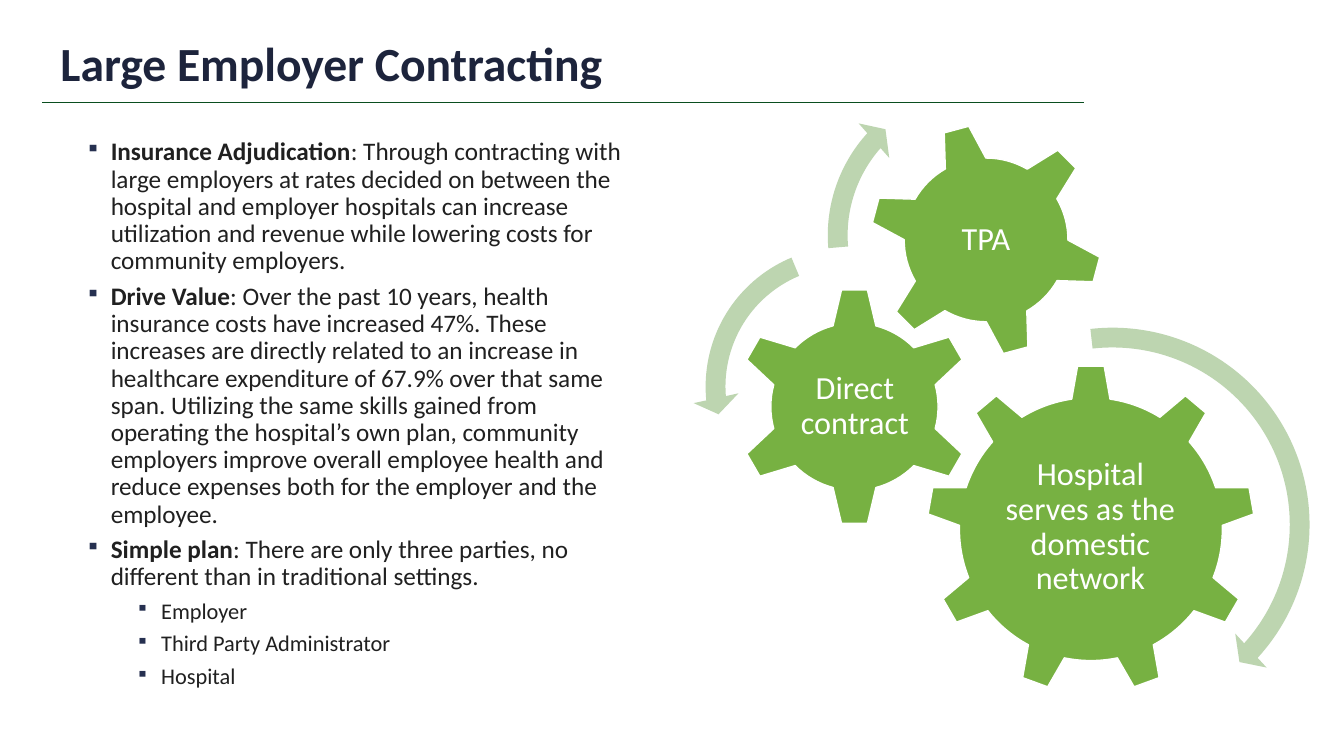
"""Build the Large Employer Contracting slide with its three-gear diagram."""
from dataclasses import dataclass
from typing import NamedTuple

from lxml.etree import SubElement
from pptx import Presentation
from pptx.dml.color import RGBColor
from pptx.enum.shapes import MSO_CONNECTOR, MSO_SHAPE
from pptx.enum.text import MSO_ANCHOR, MSO_AUTO_SIZE, PP_ALIGN
from pptx.oxml.ns import qn
from pptx.util import Emu, Pt

EMU_PER_PX = 9144
TITLE_ONLY = 5


@dataclass(frozen=True)
class Theme:
    font: str = "Calibri"
    title: str = "1D243C"
    rule: str = "0A4E1F"
    body: str = "202020"
    bullet: str = "263050"
    gear: str = "77B142"
    arrow: str = "BDD5B0"
    white: str = "FFFFFF"
    title_size: int = 34
    body_size: int = 18
    sub_size: int = 16
    gear_size: int = 23
    line_spacing: float = 0.9
    space_after: int = 6


class Box(NamedTuple):
    left: int
    top: int
    width: int
    height: int


class Point(NamedTuple):
    lead: str
    rest: str
    level: int = 0


class Gear(NamedTuple):
    preset: MSO_SHAPE
    box: Box
    label: str
    label_box: Box
    rotation: int = 0


class Arrow(NamedTuple):
    preset: MSO_SHAPE
    box: Box
    thickness: float
    head_angle: float
    end_angle: float
    start_angle: float
    head_width: float


THEME = Theme()
TITLE_BOX = Box(50, 30, 1040, 66)
BODY_BOX = Box(75, 133, 562, 542)
POINTS = [
    Point("Insurance Adjudication", ": Through contracting with large employers at rates decided on "
          "between the hospital and employer hospitals can increase utilization and revenue while "
          "lowering costs for community employers."),
    Point("Drive Value", ": Over the past 10 years, health insurance costs have increased 47%. "
          "These increases are directly related to an increase in healthcare expenditure of 67.9% "
          "over that same span. Utilizing the same skills gained from operating the hospital’s own "
          "plan, community employers improve overall employee health and reduce expenses both for "
          "the employer and the employee."),
    Point("Simple plan", ": There are only three parties, no different than in traditional settings."),
    Point("", "Employer", 1),
    Point("", "Third Party Administrator", 1),
    Point("", "Hospital", 1),
]
GEARS = [
    Gear(MSO_SHAPE.GEAR_9, Box(919, 362, 326, 326),
         "Hospital serves as the domestic network", Box(984, 439, 195, 168)),
    Gear(MSO_SHAPE.GEAR_6, Box(729, 285, 237, 237), "Direct contract", Box(789, 345, 118, 117)),
    Gear(MSO_SHAPE.GEAR_6, Box(862, 122, 232, 232), "TPA", Box(913, 173, 130, 130), 345),
]
ARROWS = [
    Arrow(MSO_SHAPE.CIRCULAR_ARROW, Box(895, 312, 417, 417), 4.7, 4.98, 42.32, 263.54, 5.5),
    Arrow(MSO_SHAPE.LEFT_CIRCULAR_ARROW, Box(687, 232, 303, 303), 6.5, 7.17, 174.82, 247.3, 7.5),
    Arrow(MSO_SHAPE.CIRCULAR_ARROW, Box(808, 70, 327, 327), 6, 6.57, 221.9, 175.14, 7),
]


def px(length: int) -> Emu:
    """Turn whole px into EMU."""
    return Emu(length * EMU_PER_PX)


def place(box: Box) -> tuple[Emu, ...]:
    """Turn a box into left, top, width and height in EMU."""
    return tuple(px(length) for length in box)


def add_span(para, text: str, size: int, color: str, bold: bool = False) -> None:
    """Add one formatted run to a paragraph."""
    span = para.add_run()
    span.text = text
    span.font.name = THEME.font
    span.font.size = Pt(size)
    span.font.bold = bold
    span.font.color.rgb = RGBColor.from_string(color)


def add_bullet(para, level: int) -> None:
    """Give a paragraph its hanging square bullet."""
    para.level = level
    properties = para._p.get_or_add_pPr()
    properties.set("marL", str(px(25 + 50 * level)))
    properties.set("indent", str(px(-25)))
    color = SubElement(properties, qn("a:buClr"))
    SubElement(color, qn("a:srgbClr"), val=THEME.bullet)
    SubElement(properties, qn("a:buSzPct"), val="80000")
    SubElement(properties, qn("a:buChar"), char="▪")


def add_title(slide) -> None:
    """Move and fill the title placeholder."""
    title = slide.shapes.title
    title.left, title.top, title.width, title.height = place(TITLE_BOX)
    frame = title.text_frame
    frame.auto_size = MSO_AUTO_SIZE.NONE
    frame.vertical_anchor = MSO_ANCHOR.BOTTOM
    para = frame.paragraphs[0]
    para.alignment = PP_ALIGN.LEFT
    para.line_spacing = THEME.line_spacing
    add_span(para, "Large Employer Contracting", THEME.title_size, THEME.title, True)


def add_rule(slide) -> None:
    """Draw the line under the title."""
    rule = slide.shapes.add_connector(MSO_CONNECTOR.STRAIGHT, px(42), px(102), px(1075), px(102))
    rule.line.color.rgb = RGBColor.from_string(THEME.rule)
    rule.line.width = Pt(1)
    SubElement(rule._element.spPr, qn("a:effectLst"))


def add_points(slide) -> None:
    """Write the bulleted list."""
    frame = slide.shapes.add_textbox(*place(BODY_BOX)).text_frame
    frame.word_wrap = True
    for index, point in enumerate(POINTS):
        para = frame.add_paragraph() if index else frame.paragraphs[0]
        add_bullet(para, point.level)
        para.line_spacing = THEME.line_spacing
        para.space_after = Pt(THEME.space_after)
        size = THEME.sub_size if point.level else THEME.body_size
        if point.lead:
            add_span(para, point.lead, size, THEME.body, True)
        add_span(para, point.rest, size, THEME.body)


def add_filled(slide, preset: MSO_SHAPE, box: Box, color: str):
    """Add a flat preset shape."""
    shape = slide.shapes.add_shape(preset, *place(box))
    shape.shadow.inherit = False
    shape.fill.solid()
    shape.fill.fore_color.rgb = RGBColor.from_string(color)
    return shape


def add_gear(slide, gear: Gear) -> None:
    """Draw a gear and its upright label."""
    shape = add_filled(slide, gear.preset, gear.box, THEME.gear)
    shape.rotation = gear.rotation
    shape.line.color.rgb = RGBColor.from_string(THEME.white)
    shape.line.width = Pt(1)
    frame = slide.shapes.add_textbox(*place(gear.label_box)).text_frame
    frame.word_wrap = True
    frame.vertical_anchor = MSO_ANCHOR.MIDDLE
    frame.margin_left = frame.margin_right = frame.margin_top = frame.margin_bottom = px(3)
    para = frame.paragraphs[0]
    para.alignment = PP_ALIGN.CENTER
    para.line_spacing = THEME.line_spacing
    add_span(para, gear.label, THEME.gear_size, THEME.white)


def add_arrow(slide, arrow: Arrow) -> None:
    """Draw a curved arrow from percentages and angles in degrees."""
    shape = add_filled(slide, arrow.preset, arrow.box, THEME.arrow)
    shape.line.fill.background()
    angles = (arrow.head_angle, arrow.end_angle, arrow.start_angle)
    values = [arrow.thickness / 100, *(angle * 0.6 for angle in angles), arrow.head_width / 100]
    for index, value in enumerate(values):
        shape.adjustments[index] = value


def main() -> None:
    """Build and save the deck."""
    deck = Presentation()
    deck.slide_width, deck.slide_height = px(1333), px(750)
    page = deck.slides.add_slide(deck.slide_layouts[TITLE_ONLY])
    add_rule(page)
    add_title(page)
    add_points(page)
    for gear in GEARS:
        add_gear(page, gear)
    for arrow in ARROWS:
        add_arrow(page, arrow)
    deck.save("out.pptx")


if __name__ == "__main__":
    main()
